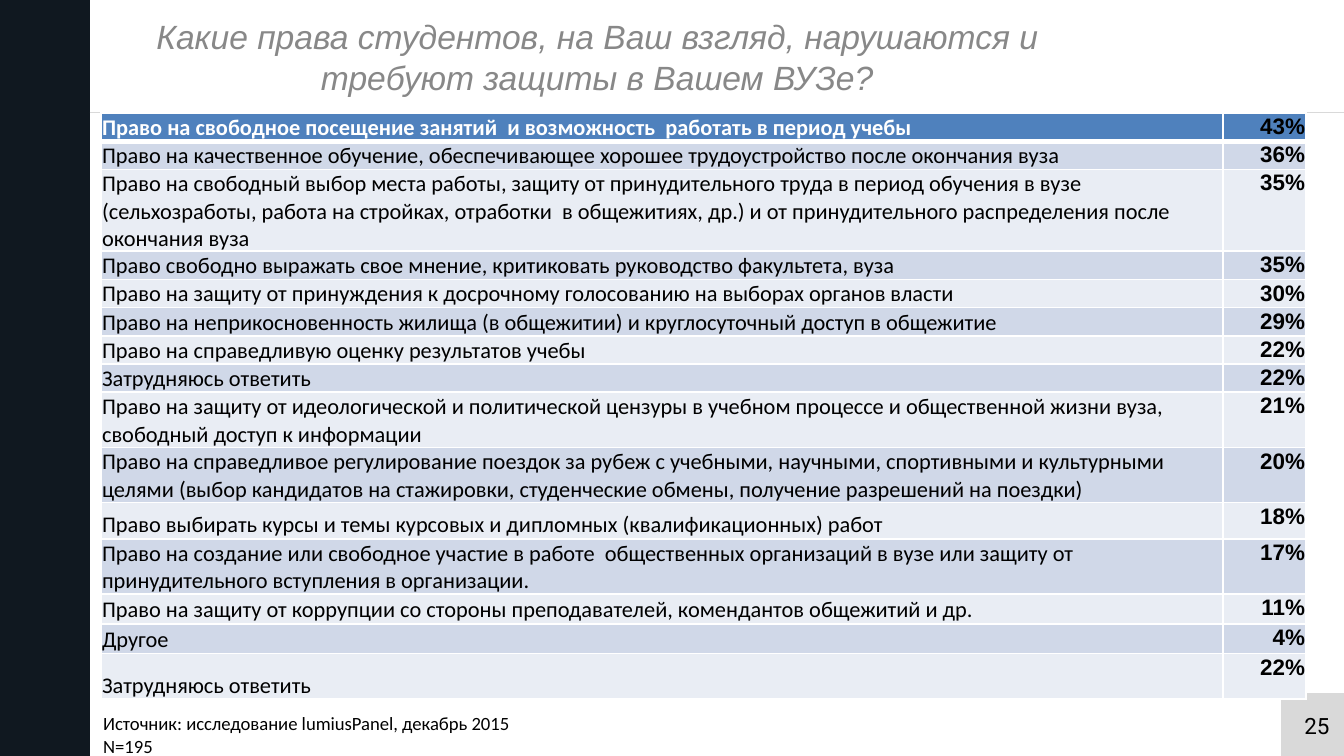
import pptx
import pptx.dml.color
import pptx.enum.shapes
import pptx.enum.text
import pptx.oxml
import pptx.oxml.ns
import pptx.util

Pt = pptx.util.Pt
Align = pptx.enum.text.PP_ALIGN
Anchor = pptx.enum.text.MSO_ANCHOR
Shape = pptx.enum.shapes.MSO_SHAPE

COLORS = {
    "sidebar": "101820",
    "grey": "D9D9D9",
    "title": "888888",
    "header": "4F81BD",
    "dark_band": "D0D8E8",
    "light_band": "E9EDF4",
    "white": "FFFFFF",
    "black": "000000",
}

# Right, share of answers, row height
RIGHTS = [
    ("Право на свободное посещение занятий  и возможность  работать в период учебы", "43%", 13),
    ("Право на качественное обучение, обеспечивающее хорошее трудоустройство после окончания вуза", "36%", 13),
    ("Право на свободный выбор места работы, защиту от принудительного труда в период обучения в вузе "
     "(сельхозработы, работа на стройках, отработки  в общежитиях, др.) и от принудительного "
     "распределения после окончания вуза", "35%", 26),
    ("Право свободно выражать свое мнение, критиковать руководство факультета, вуза", "35%", 13),
    ("Право на защиту от принуждения к досрочному голосованию на выборах органов власти", "30%", 13),
    ("Право на неприкосновенность жилища (в общежитии) и круглосуточный доступ в общежитие", "29%", 14.5),
    ("Право на справедливую оценку результатов учебы", "22%", 13),
    ("Затрудняюсь ответить", "22%", 13),
    ("Право на защиту от идеологической и политической цензуры в учебном процессе и общественной "
     "жизни вуза, свободный доступ к информации", "21%", 29.5),
    ("Право на справедливое регулирование поездок за рубеж с учебными, научными, спортивными и "
     "культурными целями (выбор кандидатов на стажировки, студенческие обмены, получение разрешений "
     "на поездки)", "20%", 26),
    ("Право выбирать курсы и темы курсовых и дипломных (квалификационных) работ", "18%", 19.5),
    ("Право на создание или свободное участие в работе  общественных организаций в вузе или защиту "
     "от принудительного вступления в организации.", "17%", 26),
    ("Право на защиту от коррупции со стороны преподавателей, комендантов общежитий и др.", "11%", 16),
    ("Другое", "4%", 16),
    ("Затрудняюсь ответить", "22%", 24.5),
]


def rgb(name):
    return pptx.dml.color.RGBColor.from_string(COLORS[name])


def style(paragraph, size, font, color, align=Align.LEFT, bold=False, italic=False):
    paragraph.alignment = align
    paragraph.font.size = Pt(size)
    paragraph.font.name = font
    paragraph.font.bold = bold
    paragraph.font.italic = italic
    paragraph.font.color.rgb = rgb(color)


def add_block(slide, kind, left, top, width, height, color):
    block = slide.shapes.add_shape(kind, Pt(left), Pt(top), Pt(width), Pt(height))
    block.shadow.inherit = False
    block.fill.solid()
    block.fill.fore_color.rgb = rgb(color)
    block.line.fill.background()


def add_rule(slide, left, right, y):
    rule = slide.shapes.add_connector(
        pptx.enum.shapes.MSO_CONNECTOR.STRAIGHT, Pt(left), Pt(y), Pt(right), Pt(y))
    rule.line.color.rgb = rgb("grey")
    rule.line.width = Pt(0.5)
    properties = rule._element.spPr
    properties.append(properties.makeelement(pptx.oxml.ns.qn("a:effectLst"), {}))


def add_text(slide, left, top, width, height, lines, size, font, align=Align.LEFT):
    box = slide.shapes.add_textbox(Pt(left), Pt(top), Pt(width), Pt(height))
    frame = box.text_frame
    frame.word_wrap = True
    frame.text = "\n".join(lines)
    for paragraph in frame.paragraphs:
        style(paragraph, size, font, "black", align)


def set_title(slide, text):
    title = slide.shapes.title
    title.left, title.top, title.width, title.height = Pt(36.7), Pt(0), Pt(566.6), Pt(60.5)
    frame = title.text_frame
    frame.text = text
    frame.word_wrap = True
    frame.auto_size = pptx.enum.text.MSO_AUTO_SIZE.NONE
    frame.vertical_anchor = Anchor.MIDDLE
    style(frame.paragraphs[0], 18, "Arial", "title", Align.CENTER, italic=True)


def set_borders(cell, top, bottom):
    for side, width in (("L", 1), ("R", 1), ("T", top), ("B", bottom)):
        cell._tc.get_or_add_tcPr().append(pptx.oxml.parse_xml(
            f'<a:ln{side} {pptx.oxml.ns.nsdecls("a")} w="{Pt(width)}"><a:solidFill>'
            f'<a:srgbClr val="{COLORS["white"]}"/></a:solidFill></a:ln{side}>'))


def fill_cell(cell, text, row, anchor):
    cell.text = text
    cell.margin_left = cell.margin_right = cell.margin_top = Pt(0.7)
    cell.margin_bottom = Pt(0)
    cell.vertical_anchor = anchor
    # The rule under the first row is thicker
    set_borders(cell, top=3 if row == 1 else 1, bottom=3 if row == 0 else 1)
    band = "header" if row == 0 else "dark_band" if row % 2 else "light_band"
    cell.fill.solid()
    cell.fill.fore_color.rgb = rgb(band)


def add_rights_table(slide):
    total = sum(height for _, _, height in RIGHTS)
    table = slide.shapes.add_table(
        len(RIGHTS), 2, Pt(54), Pt(60.5), Pt(645.8), Pt(total)).table
    table.columns[0].width = Pt(601.2)
    table.columns[1].width = Pt(44.6)
    for row, (right, share, height) in enumerate(RIGHTS):
        table.rows[row].height = Pt(height)
        right_cell, share_cell = table.cell(row, 0), table.cell(row, 1)
        fill_cell(right_cell, right, row, Anchor.BOTTOM)
        fill_cell(share_cell, share, row, Anchor.TOP)
        style(right_cell.text_frame.paragraphs[0], 12, "Calibri",
              "black" if row else "white", bold=row == 0)
        style(share_cell.text_frame.paragraphs[0], 12, "Arial", "black", Align.RIGHT, bold=True)


def main():
    deck = pptx.Presentation()
    deck.slide_width, deck.slide_height = Pt(720), Pt(405)
    slide = deck.slides.add_slide(deck.slide_layouts[5])

    # Page frame and number
    add_block(slide, Shape.RECTANGLE, 0, 0, 48.2, 405, "sidebar")
    add_rule(slide, 48.2, 720, 60.5)
    add_block(slide, Shape.FLOWCHART_PROCESS, 686, 371, 34, 34, "grey")
    add_text(slide, 686, 378, 33.3, 30, ["25"], 12, "Roboto", Align.RIGHT)

    # Question, answers and source
    set_title(slide, "Какие права студентов, на Ваш взгляд, нарушаются и требуют защиты в Вашем ВУЗе?")
    add_text(slide, 48.2, 378, 635, 31.5,
             ["Источник: исследование lumiusPanel, декабрь 2015", "N=195"], 10, "Calibri")
    add_rights_table(slide)

    deck.save("out.pptx")


if __name__ == "__main__":
    main()
